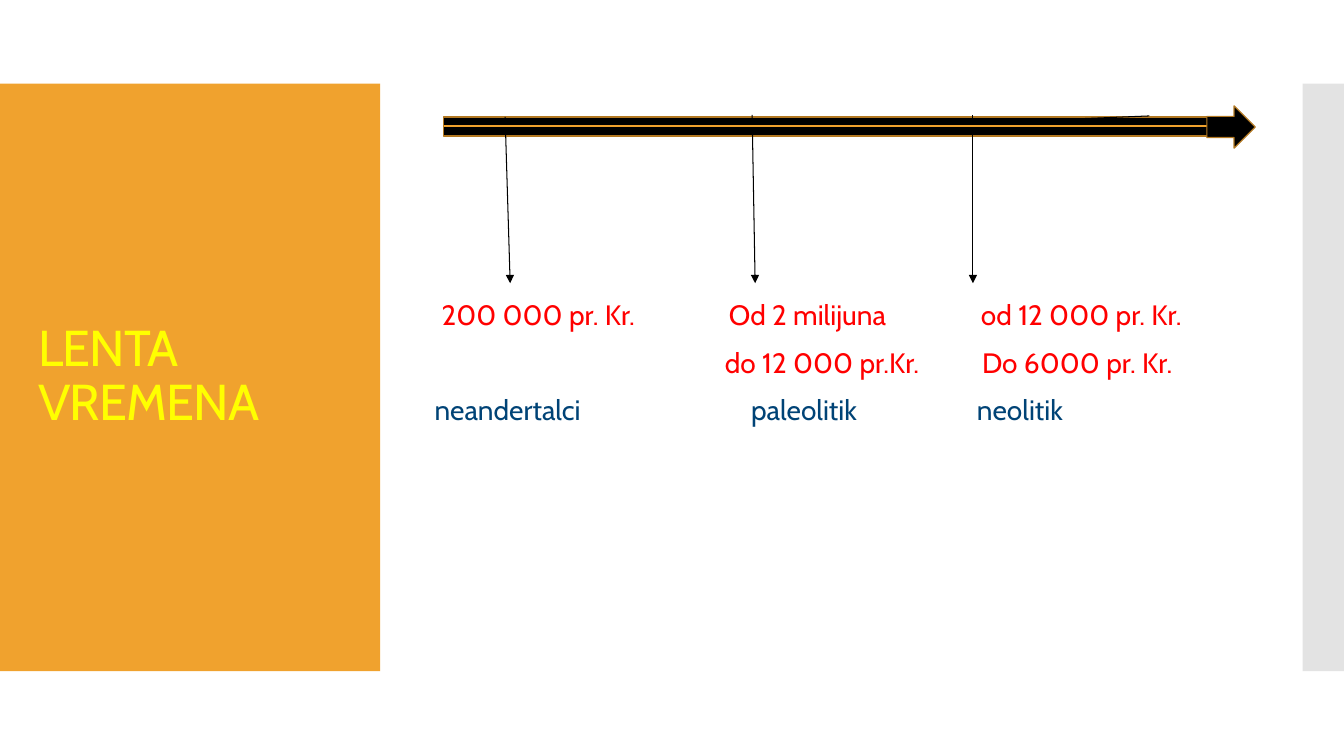
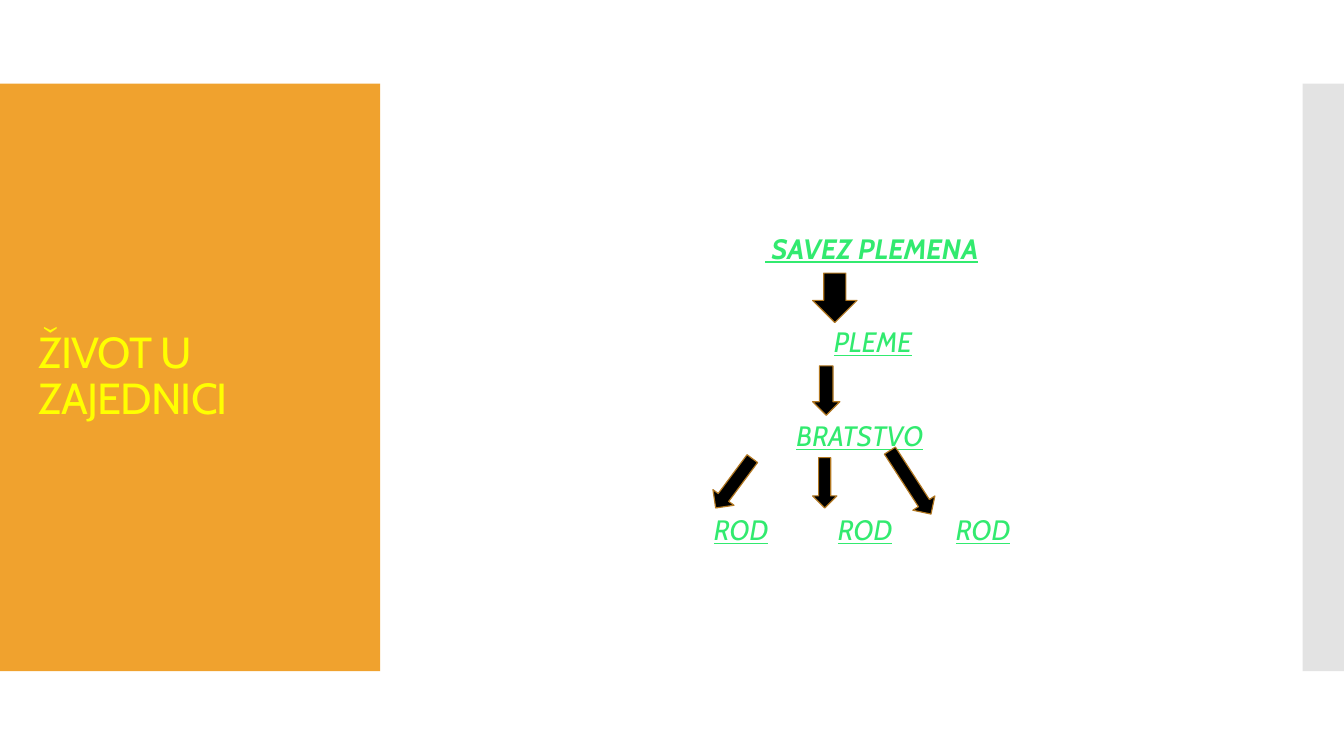
"""Build two history slides: a time line and the structure of tribal society."""
from pptx import Presentation
from pptx.dml.color import RGBColor
from pptx.enum import shapes as kinds, text as styles
from pptx.oxml.ns import qn
from pptx.util import Inches, Pt
from lxml import etree

FONT = "Cabin"
ORANGE = RGBColor(0xF0, 0xA2, 0x2E)
BROWN = RGBColor(0xB2, 0x78, 0x22)
GREY = RGBColor(0xC8, 0xC8, 0xC8)
YELLOW = RGBColor(0xFF, 0xFF, 0x00)
BLACK = RGBColor(0x00, 0x00, 0x00)
RED = RGBColor(0xFF, 0x00, 0x00)
NAVY = RGBColor(0x00, 0x43, 0x76)
GREEN = RGBColor(0x32, 0xEA, 0x6F)

BAND_TOP, BAND_HEIGHT = 0.83, 5.83
LABEL_HEIGHT = 0.4


def add_block(slide, kind, box, fill, outline=None, rotation=0):
    block = slide.shapes.add_shape(kind, *map(Inches, box))
    block.shadow.inherit = False
    block.rotation = rotation
    block.fill.solid()
    block.fill.fore_color.rgb = fill
    if outline is None:
        block.line.fill.background()
    else:
        block.line.color.rgb = outline
        block.line.width = Pt(0.85)
    return block


def add_arrow_line(slide, start, end, color=BLACK, head="triangle"):
    arrow = slide.shapes.add_connector(
        kinds.MSO_CONNECTOR.STRAIGHT, *map(Inches, start + end))
    arrow.line.color.rgb = color
    arrow.line.width = Pt(0.75)
    properties = arrow._element.spPr
    etree.SubElement(properties.find(qn("a:ln")), qn("a:tailEnd"), type=head)
    etree.SubElement(properties, qn("a:effectLst"))


def add_text(slide, box, content, size, color):
    holder = slide.shapes.add_textbox(*map(Inches, box))
    frame = holder.text_frame
    frame.vertical_anchor = styles.MSO_ANCHOR.MIDDLE
    paragraph = frame.paragraphs[0]
    paragraph.text = content
    paragraph.font.name = FONT
    paragraph.font.size = Pt(size)
    paragraph.font.color.rgb = color
    return frame


def add_label(slide, left, middle, content, color):
    box = (left, middle - LABEL_HEIGHT / 2, 2.6, LABEL_HEIGHT)
    frame = add_text(slide, box, content, 20, color)
    frame.margin_left = frame.margin_right = 0
    frame.margin_top = frame.margin_bottom = 0
    return frame.paragraphs[0]


def add_framed_slide(deck, title, title_size):
    slide = deck.slides.add_slide(deck.slide_layouts[6])
    rectangle = kinds.MSO_SHAPE.RECTANGLE
    add_block(slide, rectangle, (0, BAND_TOP, 3.77, BAND_HEIGHT), ORANGE)
    edge = add_block(slide, rectangle, (12.92, BAND_TOP, 0.42, BAND_HEIGHT), GREY)
    tint = edge._element.spPr.find(qn("a:solidFill"))[0]
    etree.SubElement(tint, qn("a:alpha"), val="50000")
    frame = add_text(slide, (0.28, 1.23, 3.22, 5.03), title, title_size, YELLOW)
    frame.word_wrap = True
    heading = frame.paragraphs[0]
    heading.line_spacing = 0.9
    heading.runs[0]._r.get_or_add_rPr().set("spc", "-60")
    return slide


def build_timeline(deck):
    slide = add_framed_slide(deck, "LENTA VREMENA", 36)
    first_row, row_step = 3.12, 0.47
    labels = (
        (4.38, 0, "200 000 pr. Kr.", RED),
        (7.23, 0, "Od 2 milijuna", RED),
        (9.73, 0, "od 12 000 pr. Kr.", RED),
        (7.19, 1, "do 12 000 pr.Kr.", RED),
        (9.74, 1, "Do 6000 pr. Kr.", RED),
        (4.31, 2, "neandertalci", NAVY),
        (7.45, 2, "paleolitik", NAVY),
        (9.69, 2, "neolitik", NAVY),
    )
    for left, row, content, color in labels:
        add_label(slide, left, first_row + row * row_step, content, color)

    add_block(slide, kinds.MSO_SHAPE.RECTANGLE, (4.4, 1.16, 7.67, 0.19), BLACK, BROWN)
    pointers = (
        ((5.01, 1.16), (5.06, 2.81)),
        ((7.46, 1.14), (7.49, 2.81)),
        ((9.65, 1.14), (9.65, 2.81)),
        ((11.4, 1.15), (8.93, 1.25)),
    )
    for start, end in pointers:
        add_arrow_line(slide, start, end)
    add_arrow_line(slide, (4.4, 1.25), (12.21, 1.25), ORANGE, "arrow")
    add_block(slide, kinds.MSO_SHAPE.RIGHT_ARROW, (11.97, 1.05, 0.48, 0.42), BLACK, BROWN)


def build_community(deck):
    slide = add_framed_slide(deck, "ŽIVOT U ZAJEDNICI", 31)
    first_level, level_step = 2.46, 0.93
    groups = (
        (7.59, 0, " SAVEZ PLEMENA"),
        (8.27, 1, "PLEME"),
        (7.9, 2, "BRATSTVO"),
        (7.08, 3, "ROD"),
        (8.31, 3, "ROD"),
        (9.48, 3, "ROD"),
    )
    for left, level, content in groups:
        group = add_label(slide, left, first_level + level * level_step, content, GREEN)
        group.font.bold = level == 0
        group.font.italic = True
        group.font.underline = True

    arrows = (
        ((8.06, 2.71, 0.44, 0.49), 0),
        ((8.06, 3.63, 0.27, 0.49), 0),
        ((7.15, 4.49, 0.26, 0.61), 36.6),
        ((8.06, 4.54, 0.24, 0.5), 0),
        ((8.9, 4.41, 0.26, 0.75), 327.1),
    )
    for box, rotation in arrows:
        add_block(slide, kinds.MSO_SHAPE.DOWN_ARROW, box, BLACK, BROWN, rotation)


def main():
    deck = Presentation()
    deck.slide_width, deck.slide_height = Inches(13.33), Inches(7.5)
    build_timeline(deck)
    build_community(deck)
    deck.save("out.pptx")


if __name__ == "__main__":
    main()
